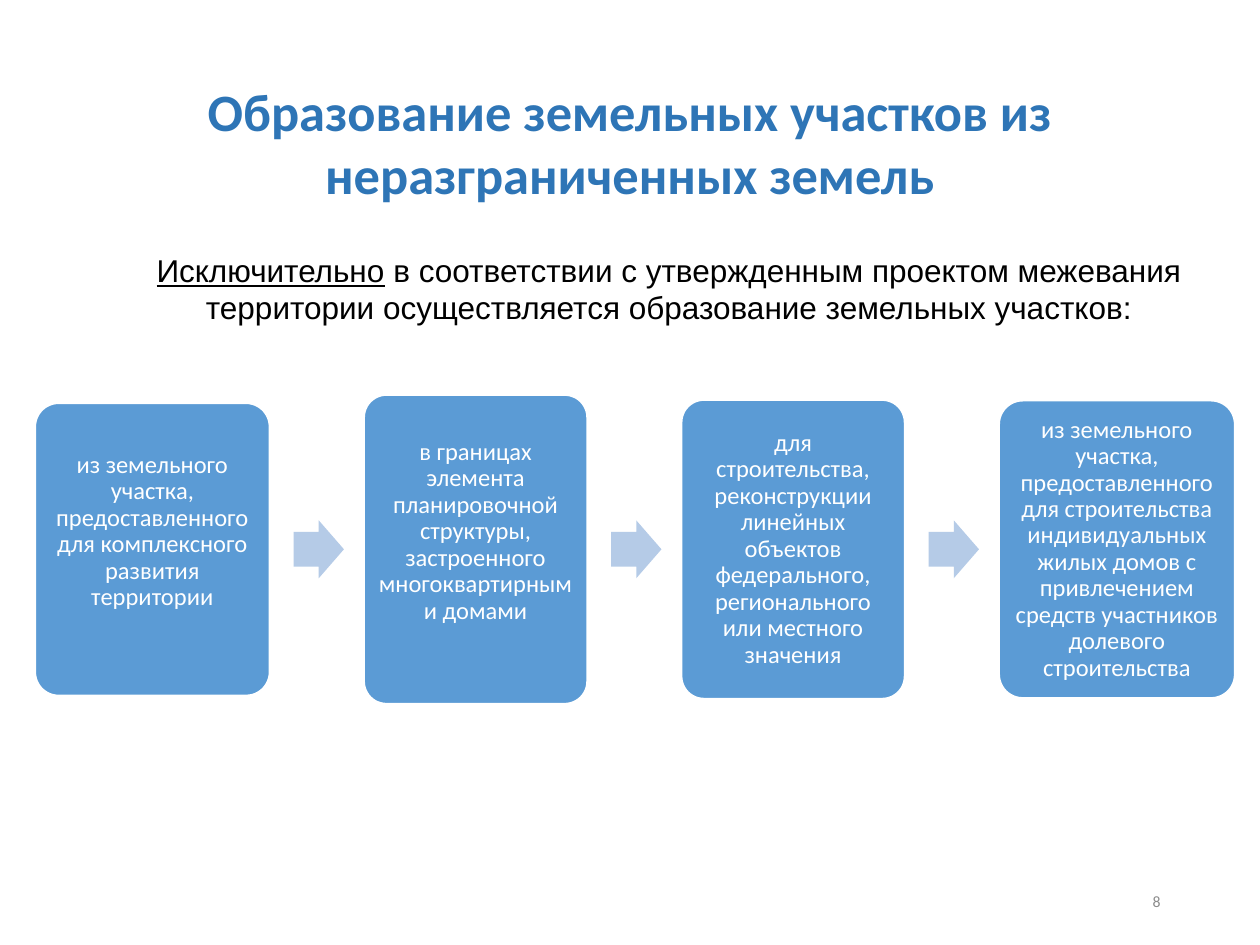
from pptx import Presentation
from pptx.dml.color import RGBColor
from pptx.enum.shapes import MSO_SHAPE
from pptx.enum.text import MSO_ANCHOR, PP_ALIGN
from pptx.util import Inches, Pt

ROUNDED, ARROW = MSO_SHAPE.ROUNDED_RECTANGLE, MSO_SHAPE.RIGHT_ARROW
TOP, MIDDLE = MSO_ANCHOR.TOP, MSO_ANCHOR.MIDDLE
CENTER, RIGHT = PP_ALIGN.CENTER, PP_ALIGN.RIGHT

TITLE = "Образование земельных участков из неразграниченных земель"
INTRO = [
    ("Исключительно", {"underline": True}),
    (" в соответствии с утвержденным проектом межевания территории "
     "осуществляется образование земельных участков:", {}),
]
PAGE_NUMBER = "8"
# text, width, height, extra space below the text
CARDS = [
    ("из земельного участка, предоставленного для комплексного развития "
     "территории", 1.86, 2.32, 0.28),
    ("в границах элемента планировочной структуры, застроенного "
     "многоквартирными домами", 1.77, 2.45, 0.28),
    ("для строительства, реконструкции линейных объектов федерального, "
     "регионального или местного значения", 1.77, 2.37, 0),
    ("из земельного участка, предоставленного для строительства "
     "индивидуальных жилых домов с привлечением средств участников "
     "долевого строительства", 1.87, 2.36, 0),
]
ROW_LEFT, ROW_MIDDLE, CARD_GAP = 0.28, 4.36, 0.75
ARROW_OFFSET, ARROW_WIDTH, ARROW_HEIGHT = 0.19, 0.4, 0.46
INSET = 0.06


def color(value):
    return RGBColor.from_string(value)


def write(box, spans, size, fill, font="Calibri", align=CENTER, anchor=MIDDLE,
          bold=False, line_spacing=1.0):
    frame = box.text_frame
    frame.word_wrap = True
    frame.vertical_anchor = anchor
    para = frame.paragraphs[0]
    para.alignment = align
    para.line_spacing = line_spacing
    for text, extra in spans:
        span = para.add_run()
        span.text = text
        span.font.color.rgb = color(fill)
        formats = {"name": font, "size": Pt(size), "bold": bold, **extra}
        for name, value in formats.items():
            setattr(span.font, name, value)


def add_text(page, place, spans, size, fill, **options):
    box = page.shapes.add_textbox(*map(Inches, place))
    write(box, spans, size, fill, **options)


def add_centered(page, kind, left, width, height, fill, adjustments):
    """Add a filled shape centred vertically on the row of cards."""
    place = (left, ROW_MIDDLE - height / 2, width, height)
    shape = page.shapes.add_shape(kind, *map(Inches, place))
    shape.shadow.inherit = False
    shape.fill.solid()
    shape.fill.fore_color.rgb = color(fill)
    for index, value in enumerate(adjustments):
        shape.adjustments[index] = value
    return shape


def add_card(page, left, text, width, height, space_below):
    card = add_centered(page, ROUNDED, left, width, height, "5B9BD5", [0.1])
    card.line.color.rgb = color("FFFFFF")
    card.line.width = Pt(1)
    frame = card.text_frame
    for side in ("left", "top", "right"):
        setattr(frame, f"margin_{side}", Inches(INSET))
    frame.margin_bottom = Inches(INSET + space_below)
    write(card, [(text, {})], 14, "FFFFFF", line_spacing=0.9)


def main():
    deck = Presentation()
    deck.slide_width, deck.slide_height = Inches(10), Inches(7.5)
    page = deck.slides.add_slide(deck.slide_layouts[6])

    add_text(page, (0.69, 0.4, 8.62, 1.45), [(TITLE, {})], 30, "2E75B6", bold=True)
    add_text(page, (7.06, 6.95, 2.25, 0.4), [(PAGE_NUMBER, {})], 9, "8C8C8C",
             align=RIGHT)

    left = ROW_LEFT
    for number, (text, width, height, space_below) in enumerate(CARDS, 1):
        add_card(page, left, text, width, height, space_below)
        if number < len(CARDS):
            arrow = add_centered(page, ARROW, left + width + ARROW_OFFSET,
                                 ARROW_WIDTH, ARROW_HEIGHT, "B5CBE7", [0.6, 0.5])
            arrow.line.fill.background()
        left += width + CARD_GAP

    add_text(page, (1.06, 1.94, 8.5, 0.71), INTRO, 18, "000000", font="Arial",
             anchor=TOP)
    deck.save("out.pptx")


if __name__ == "__main__":
    main()
